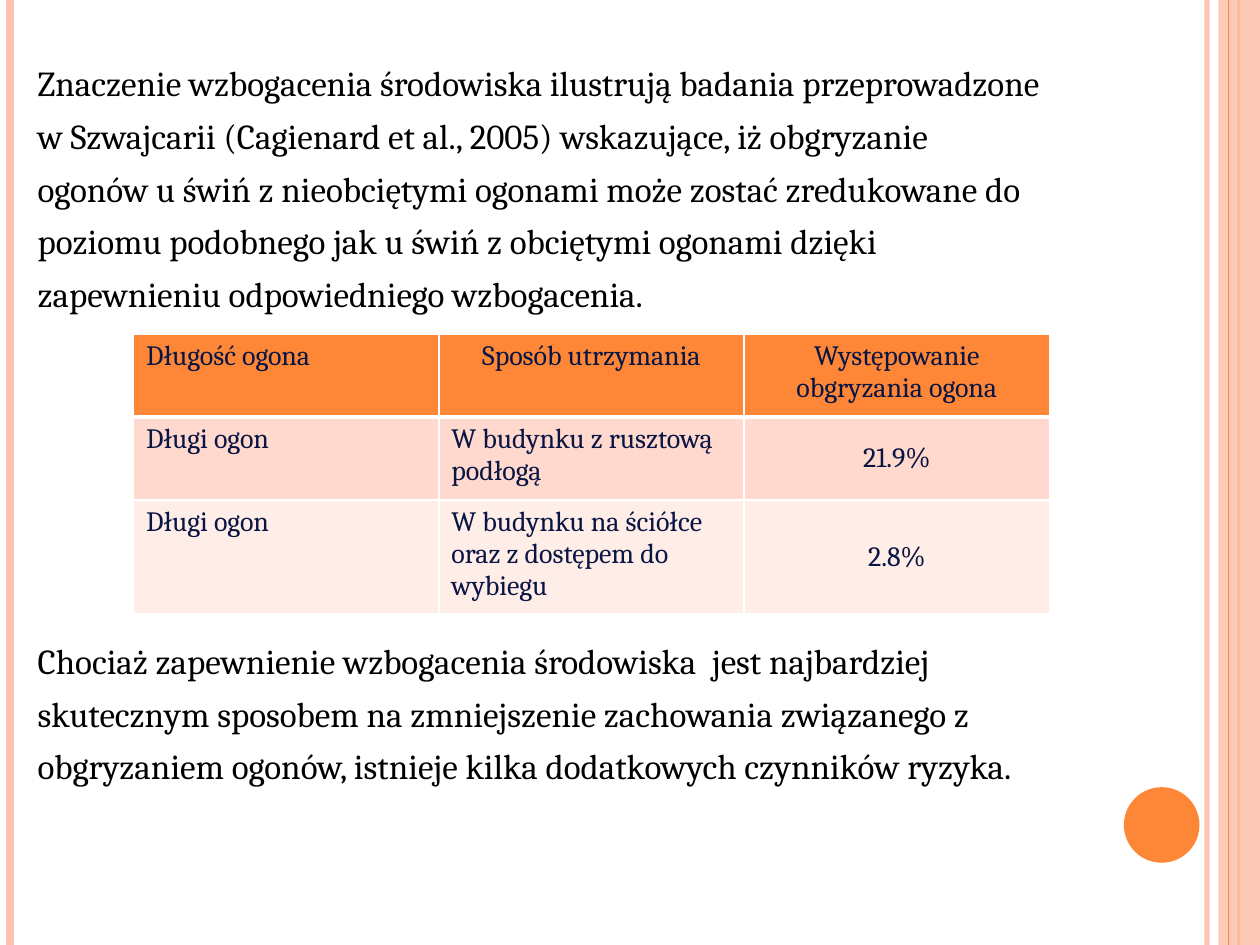
"""Builds the slide on tail biting in pigs and enriched housing."""
from lxml import etree
from pptx import Presentation, util as u
from pptx.dml.color import RGBColor
from pptx.enum import shapes, text
from pptx.oxml.ns import qn

WIDTH, HEIGHT = u.Inches(10), u.Inches(7.5)
FONT = "Cambria"
COLORS = {
    "orange": "FE8637", "peach": "FEC3AE", "white": "FFFFFF", "black": "000000",
    "navy": "091543", "band": "FFD9CE", "pale": "FFEDE8",
}
STRIPES = [(0.958, "peach", 3, 93), (0.008, "peach", 4.5, 100), (0.983, "orange", 1.5, 100)]
INNER_STRIPE = (0.975, "orange", 0.75, 100)
FINDINGS = [
    "Znaczenie wzbogacenia środowiska ilustrują badania przeprowadzone",
    "w Szwajcarii (Cagienard et al., 2005) wskazujące, iż obgryzanie",
    "ogonów u świń z nieobciętymi ogonami może zostać zredukowane do",
    "poziomu podobnego jak u świń z obciętymi ogonami dzięki",
    "zapewnieniu odpowiedniego wzbogacenia.",
]
CONCLUSION = [
    "Chociaż zapewnienie wzbogacenia środowiska  jest najbardziej",
    "skutecznym sposobem na zmniejszenie zachowania związanego z",
    "obgryzaniem ogonów, istnieje kilka dodatkowych czynników ryzyka.",
]
ROWS = [
    ("Długość ogona", "Sposób utrzymania", "Występowanie obgryzania ogona"),
    ("Długi ogon", "W budynku z rusztową podłogą", "21.9%"),
    ("Długi ogon", "W budynku na ściółce oraz z dostępem do wybiegu", "2.8%"),
]
ROW_HEIGHTS = [0.66, 0.66, 0.86]
ROW_FILLS = ["orange", "band", "pale"]


def x(share):
    """Return a share of the slide's width."""
    return round(WIDTH * share)


def y(share):
    """Return a share of the slide's height."""
    return round(HEIGHT * share)


def rgb(name):
    """Return a named colour."""
    return RGBColor.from_string(COLORS[name])


def set_opacity(element, percent):
    """Set the opacity of the solid colour inside an element."""
    color = next(element.iter(qn("a:srgbClr")))
    etree.SubElement(color, qn("a:alpha"), val=str(percent * 1000))


def add_stripe(slide, share, color, width, opacity):
    """Draw a vertical line over the slide's full height."""
    line = slide.shapes.add_connector(
        shapes.MSO_CONNECTOR.STRAIGHT, x(share), 0, x(share), HEIGHT)
    line.line.color.rgb = rgb(color)
    line.line.width = u.Pt(width)
    properties = line._element.spPr
    etree.SubElement(properties, qn("a:effectLst"))
    if opacity < 100:
        set_opacity(properties, opacity)


def add_shape(slide, kind, left, top, width, height, color, opacity=100):
    """Draw a plain filled shape without outline."""
    shape = slide.shapes.add_shape(kind, left, top, width, height)
    shape.shadow.inherit = False
    shape.fill.solid()
    shape.fill.fore_color.rgb = rgb(color)
    shape.line.fill.background()
    if opacity < 100:
        set_opacity(shape._element.spPr, opacity)


def write(paragraph, content, size=20, color="black", align=text.PP_ALIGN.LEFT, before=0):
    """Write formatted text into a paragraph."""
    paragraph.alignment = align
    paragraph.space_before = u.Pt(before)
    run = paragraph.add_run()
    run.text = content
    run.font.name = FONT
    run.font.size = u.Pt(size)
    run.font.color.rgb = rgb(color)


def add_body(slide):
    """Add the text, leaving room for the table before the conclusion."""
    frame = slide.shapes.add_textbox(x(0.02), y(0.059), x(0.921), y(0.885)).text_frame
    frame.word_wrap = True
    lines = FINDINGS + CONCLUSION
    gaps = {0: 0, len(FINDINGS): 186}
    for index, line in enumerate(lines):
        paragraph = frame.add_paragraph() if index else frame.paragraphs[0]
        write(paragraph, line, before=gaps.get(index, 6))


def add_border(cell, side, width):
    """Add a white border to one side of a cell."""
    properties = cell._tc.get_or_add_tcPr()
    line = etree.SubElement(properties, qn(f"a:ln{side}"), w=str(u.Pt(width)))
    fill = etree.SubElement(line, qn("a:solidFill"))
    etree.SubElement(fill, qn("a:srgbClr"), val=COLORS["white"])


def add_results(slide):
    """Add the table of tail biting by housing."""
    table = slide.shapes.add_table(
        len(ROWS), len(ROWS[0]), x(0.106), u.Inches(2.65),
        x(0.727), u.Inches(sum(ROW_HEIGHTS))).table
    table.horz_banding = False
    for row, values in enumerate(ROWS):
        table.rows[row].height = u.Inches(ROW_HEIGHTS[row])
        for column, value in enumerate(values):
            cell = table.cell(row, column)
            widths = {"L": 1, "R": 1, "T": 3 if row == 1 else 1, "B": 3 if row == 0 else 1}
            for side, width in widths.items():
                add_border(cell, side, width)
            cell.fill.solid()
            cell.fill.fore_color.rgb = rgb(ROW_FILLS[row])
            centred = column == 2 or (row == 0 and column == 1)
            align = text.PP_ALIGN.CENTER if centred else text.PP_ALIGN.LEFT
            if row and column == 2:
                cell.vertical_anchor = text.MSO_ANCHOR.MIDDLE
            paragraph = cell.text_frame.paragraphs[0]
            write(paragraph, value, size=16, color="navy", align=align)
            paragraph.runs[0].font.bold = False


def add_decoration(slide):
    """Draw the side stripes, the right band and the disc."""
    for stripe in STRIPES:
        add_stripe(slide, *stripe)
    add_shape(slide, shapes.MSO_SHAPE.RECTANGLE, x(0.967), 0, x(0.033), HEIGHT, "peach", 87)
    add_stripe(slide, *INNER_STRIPE)
    add_shape(slide, shapes.MSO_SHAPE.OVAL, x(0.892), y(0.833), x(0.06), x(0.06), "orange")


def main():
    """Build and save the presentation."""
    presentation = Presentation()
    presentation.slide_width, presentation.slide_height = WIDTH, HEIGHT
    slide = presentation.slides.add_slide(presentation.slide_layouts[6])
    slide.background.fill.solid()
    slide.background.fill.fore_color.rgb = rgb("white")
    add_decoration(slide)
    add_body(slide)
    add_results(slide)
    presentation.save("out.pptx")


if __name__ == "__main__":
    main()
